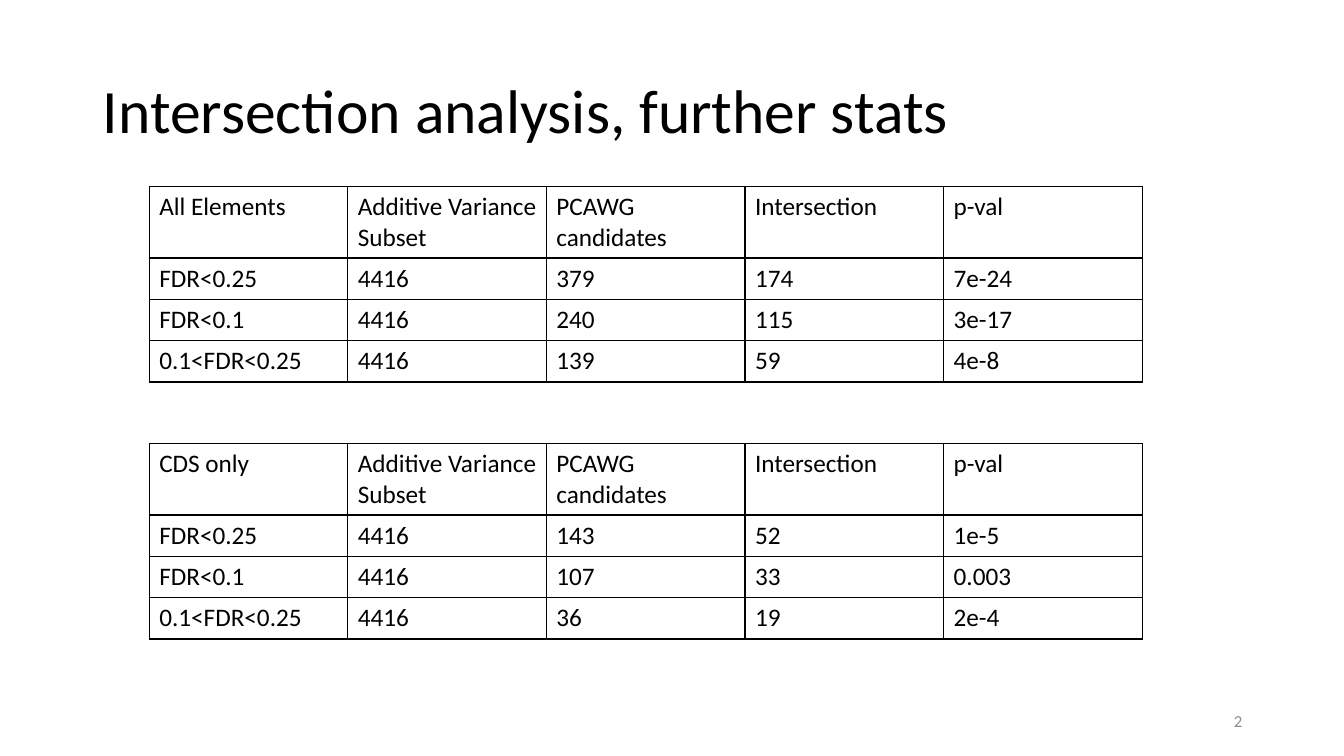
from dataclasses import dataclass

from lxml import etree
from pptx import Presentation
from pptx import util as u
from pptx.dml.color import RGBColor
from pptx.enum import text
from pptx.oxml import ns

PX = 9144  # EMU per px, 100 px to the inch


@dataclass(frozen=True)
class Theme:
    font: str = "Calibri"
    ink: str = "000000"
    muted: str = "8C8C8C"
    title_size: int = 44
    table_size: int = 18
    number_size: int = 12
    border_width: int = 1


@dataclass(frozen=True)
class Box:
    left: int
    top: int
    width: int
    height: int

    def emu(self) -> tuple[int, int, int, int]:
        return self.left * PX, self.top * PX, self.width * PX, self.height * PX


@dataclass(frozen=True)
class StatsTable:
    top: int
    heading: str
    rows: tuple[tuple[str, ...], ...]


THEME = Theme()
TITLE_BOX = Box(92, 40, 1150, 145)
NUMBER_BOX = Box(942, 695, 300, 40)
TABLE_LEFT, COLUMN_WIDTH = 148, 197
HEADER_HEIGHT, ROW_HEIGHT = 71, 41
COLUMN_HEADINGS = ("Additive Variance Subset", "PCAWG candidates", "Intersection", "p-val")

TABLES = (
    StatsTable(185, "All Elements", (
        ("FDR<0.25", "4416", "379", "174", "7e-24"),
        ("FDR<0.1", "4416", "240", "115", "3e-17"),
        ("0.1<FDR<0.25", "4416", "139", "59", "4e-8"),
    )),
    StatsTable(440, "CDS only", (
        ("FDR<0.25", "4416", "143", "52", "1e-5"),
        ("FDR<0.1", "4416", "107", "33", "0.003"),
        ("0.1<FDR<0.25", "4416", "36", "19", "2e-4"),
    )),
)


def write(frame, words: str, size: int, color: str, align=text.PP_ALIGN.LEFT) -> None:
    frame.text = words
    paragraph = frame.paragraphs[0]
    paragraph.alignment = align
    paragraph.font.name = THEME.font
    paragraph.font.size = u.Pt(size)
    paragraph.font.color.rgb = RGBColor.from_string(color)


def add_title(slide, words: str) -> None:
    title = slide.shapes.title
    title.left, title.top, title.width, title.height = TITLE_BOX.emu()
    frame = title.text_frame
    write(frame, words, THEME.title_size, THEME.ink)
    frame.paragraphs[0].line_spacing = 0.9
    frame.vertical_anchor = text.MSO_ANCHOR.MIDDLE
    frame.auto_size = text.MSO_AUTO_SIZE.NONE


def add_page_number(slide, number: str) -> None:
    frame = slide.shapes.add_textbox(*NUMBER_BOX.emu()).text_frame
    frame.word_wrap = True
    frame.vertical_anchor = text.MSO_ANCHOR.MIDDLE
    write(frame, number, THEME.number_size, THEME.muted, text.PP_ALIGN.RIGHT)


def set_borders(cell) -> None:
    properties = cell._tc.get_or_add_tcPr()
    for index, side in enumerate(("lnL", "lnR", "lnT", "lnB")):
        line = etree.Element(ns.qn(f"a:{side}"), w=str(u.Pt(THEME.border_width)))
        fill = etree.SubElement(line, ns.qn("a:solidFill"))
        etree.SubElement(fill, ns.qn("a:srgbClr"), val=THEME.ink)
        properties.insert(index, line)


def add_stats_table(slide, stats: StatsTable) -> None:
    grid = ((stats.heading, *COLUMN_HEADINGS), *stats.rows)
    columns = len(grid[0])
    box = Box(TABLE_LEFT, stats.top, columns * COLUMN_WIDTH,
              HEADER_HEIGHT + len(stats.rows) * ROW_HEIGHT)
    table = slide.shapes.add_table(len(grid), columns, *box.emu()).table
    table.first_row = table.horz_banding = False
    for column in table.columns:
        column.width = COLUMN_WIDTH * PX
    for row_index, values in enumerate(grid):
        table.rows[row_index].height = (ROW_HEIGHT if row_index else HEADER_HEIGHT) * PX
        for column_index, value in enumerate(values):
            cell = table.cell(row_index, column_index)
            write(cell.text_frame, value, THEME.table_size, THEME.ink)
            cell.fill.background()
            set_borders(cell)


def main() -> None:
    presentation = Presentation()
    presentation.slide_width, presentation.slide_height = 1333 * PX, 750 * PX
    slide = presentation.slides.add_slide(presentation.slide_layouts.get_by_name("Title Only"))

    # Title and page number
    add_title(slide, "Intersection analysis, further stats")
    add_page_number(slide, "2")

    # Intersection tables
    for stats in TABLES:
        add_stats_table(slide, stats)

    presentation.save("out.pptx")


if __name__ == "__main__":
    main()
